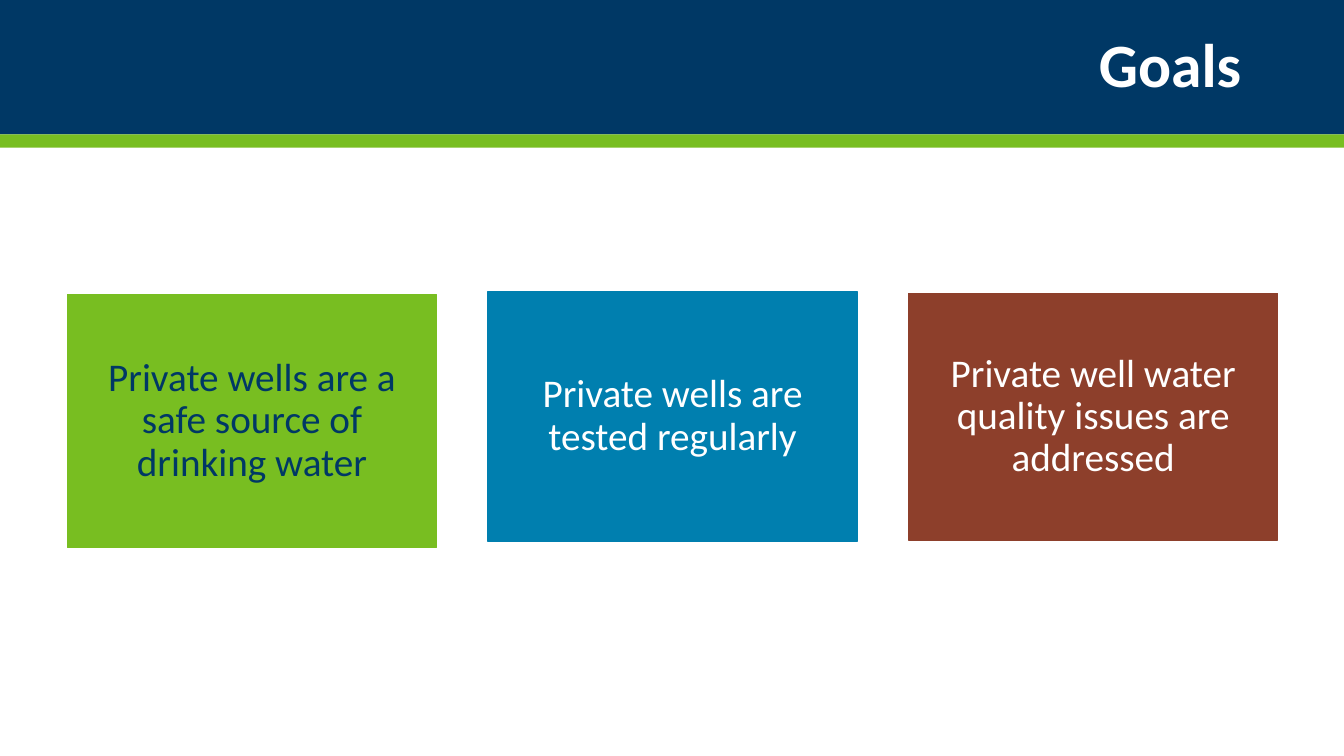
from pptx import Presentation
from pptx.dml.color import RGBColor
from pptx.enum.shapes import MSO_SHAPE
from pptx.enum.text import MSO_ANCHOR, PP_ALIGN
from pptx.util import Cm, Pt

RECTANGLE = MSO_SHAPE.RECTANGLE
MIDDLE = MSO_ANCHOR.MIDDLE
CENTER, RIGHT = PP_ALIGN.CENTER, PP_ALIGN.RIGHT

NAVY = RGBColor(0x00, 0x38, 0x65)
GREEN = RGBColor(0x78, 0xBE, 0x21)
BLUE = RGBColor(0x00, 0x7F, 0xAF)
RUST = RGBColor(0x8D, 0x3F, 0x2B)
WHITE = RGBColor(0xFF, 0xFF, 0xFF)

SLIDE_WIDTH, SLIDE_HEIGHT = 33.87, 19.05
HEADER_HEIGHT, STRIPE_HEIGHT = 3.39, 0.33
CARD_LEFT, CARD_STEP, CARD_WIDTH = 1.7, 10.6, 9.3

# text, fill, text colour, top, height
GOALS = [
    ("Private wells are a safe source of drinking water", GREEN, NAVY, 7.42, 6.38),
    ("Private wells are tested regularly", BLUE, WHITE, 7.34, 6.3),
    ("Private well water quality issues are addressed", RUST, WHITE, 7.39, 6.22),
]


class GoalsSlide:
    """Holds the current slide and its text style."""

    font_name = "Calibri"
    line_spacing = 0.9

    def __init__(self, presentation):
        self.slide = presentation.slides.add_slide(presentation.slide_layouts[5])

    def set_text(self, shape, text, size, color, alignment, bold=False):
        frame = shape.text_frame
        frame.text = text
        frame.word_wrap = True
        frame.vertical_anchor = MIDDLE
        paragraph = frame.paragraphs[0]
        paragraph.alignment = alignment
        paragraph.line_spacing = self.line_spacing
        font = paragraph.font
        font.name, font.size, font.bold = self.font_name, Pt(size), bold
        font.color.rgb = color

    def rectangle(self, left, top, width, height, fill):
        shape = self.slide.shapes.add_shape(
            RECTANGLE, Cm(left), Cm(top), Cm(width), Cm(height))
        shape.shadow.inherit = False
        shape.fill.solid()
        shape.fill.fore_color.rgb = fill
        shape.line.fill.background()
        return shape

    def title(self, text):
        """Format the title placeholder and bring it in front of the header."""
        title = self.slide.shapes.title
        title.left, title.top = Cm(2.33), Cm(0.42)
        title.width, title.height = Cm(29.21), Cm(2.54)
        self.set_text(title, text, 44, WHITE, RIGHT, bold=True)
        title._element.getparent().append(title._element)

    def card(self, left, top, height, text, fill, color):
        shape = self.rectangle(left, top, CARD_WIDTH, height, fill)
        shape.line.color.rgb = fill
        shape.line.width = Pt(0.85)
        frame = shape.text_frame
        frame.margin_left = frame.margin_right = Cm(0.5)
        frame.margin_top = frame.margin_bottom = Cm(0.3)
        self.set_text(shape, text, 28, color, CENTER)


def main():
    presentation = Presentation()
    presentation.slide_width = Cm(SLIDE_WIDTH)
    presentation.slide_height = Cm(SLIDE_HEIGHT)

    goals = GoalsSlide(presentation)
    goals.rectangle(0, 0, SLIDE_WIDTH, HEADER_HEIGHT, NAVY)
    goals.rectangle(0, HEADER_HEIGHT, SLIDE_WIDTH, STRIPE_HEIGHT, GREEN)
    goals.title("Goals")
    for index, (text, fill, color, top, height) in enumerate(GOALS):
        goals.card(CARD_LEFT + index * CARD_STEP, top, height, text, fill, color)

    presentation.save("out.pptx")


if __name__ == "__main__":
    main()
